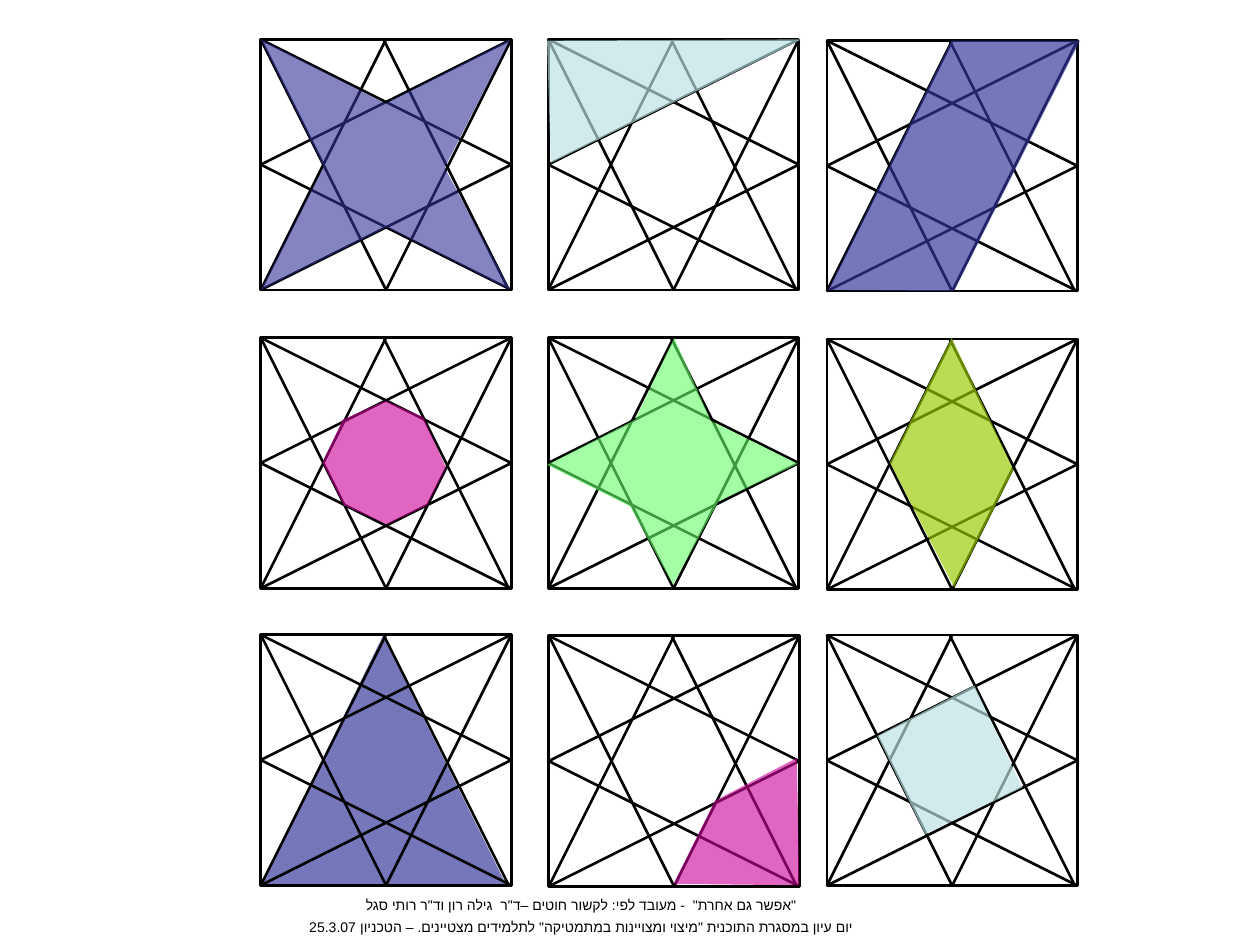
from lxml import etree
from pptx import Presentation
from pptx.dml.color import RGBColor
from pptx.enum.shapes import MSO_CONNECTOR, MSO_SHAPE
from pptx.enum.text import MSO_AUTO_SIZE, PP_ALIGN
from pptx.oxml.ns import qn
from pptx.util import Pt

RECTANGLE = MSO_SHAPE.RECTANGLE
STRAIGHT = MSO_CONNECTOR.STRAIGHT
CENTER = PP_ALIGN.CENTER
GROW = MSO_AUTO_SIZE.SHAPE_TO_FIT_TEXT

COLORS = {
    "ink": "000000",
    "indigo": "333399",
    "magenta": "CC0099",
    "lime": "99CC00",
    "mint": "66FF66",
    "ice": "BBE0E3",
}

TILE = 143.2
# Threads of one tile, as fractions of its side: x1, y1, x2, y2
THREADS = [
    (0, 0, 1, 0.5), (0, 0.5, 1, 0), (0, 1, 1, 0.5), (0, 0.5, 1, 1),
    (0.5, 1, 1, 0), (0, 0, 0.5, 1), (0.5, 0, 0, 1), (0.49, 0, 0.99, 1),
]

# Left, top, colour, opacity in percent, corners measured from the tile corner
TILES = [
    (149, 22.5, "indigo", 60, [
        (0, 0), (36, 72.7), (0, 143.2), (72, 107.3),
        (142.6, 143.2), (105.1, 73.4), (142.6, 0), (71.3, 36.7)]),
    (313.3, 22.5, "ice", 67, [(1.4, 70.6), (-0.7, 0.7), (144.7, 0)]),
    (472.5, 23.2, "indigo", 67, [
        (0.7, 142.6), (71.3, 0), (144.7, 0), (72.7, 143.2)]),
    (149, 193, "magenta", 60, [
        (46.8, 46.8), (35.3, 71.3), (47.5, 95.8), (72, 106.6),
        (95, 95.8), (105.8, 74.2), (92.9, 45.4), (71.3, 36)]),
    (313.3, 193, "mint", 60, [
        (142.6, 72), (92.9, 47.5), (72, 0), (49.7, 46.8),
        (-0.7, 72.7), (46.8, 96.5), (71.3, 141.1), (97.2, 93.6)]),
    (472.5, 193.7, "lime", 67, [
        (36, 70.6), (71.3, -0.7), (106.6, 74.9), (72.7, 141.8)]),
    (149, 362.7, "indigo", 67, [(0, 143.2), (69.8, 0.7), (140.4, 143.2)]),
    (313.6, 363.3, "magenta", 60, [
        (143.2, 142.6), (71.3, 141.8), (95, 94.3), (141.8, 69.8)]),
    (472.5, 362.9, "ice", 67, [
        (28.8, 57.6), (56.2, 113.8), (111.6, 87.1), (84.2, 28.8)]),
]
TRIANGLE_TILE = 6  # its threads lie over the coloured shape

CREDITS = [
    '"אפשר גם אחרת"  - מעובד לפי: לקשור חוטים –ד"ר  גילה רון וד"ר רותי סגל',
    'יום עיון במסגרת התוכנית "מיצוי ומצויינות במתמטיקה" לתלמידים מצטיינים. – הטכניון 25.3.07',
]


def write(para, text, font="Arial", size=8, color="ink", before=0):
    """Fill a centred right-to-left paragraph."""
    para.alignment = CENTER
    para.space_before = Pt(before)
    para._p.get_or_add_pPr().set("rtl", "1")
    span = para.add_run()
    span.text = text
    span.font.size = Pt(size)
    span.font.name = font
    span.font.color.rgb = RGBColor.from_string(COLORS[color])
    etree.SubElement(span._r.get_or_add_rPr(), qn("a:cs"), typeface=font)


class Painter:
    """Holds the line style and the current page."""

    def __init__(self, page, color="ink", width=1.5):
        self.page = page
        self.color = RGBColor.from_string(COLORS[color])
        self.width = Pt(width)

    def outline(self, shape):
        shape.line.color.rgb = self.color
        shape.line.width = self.width

    def thread(self, group, x1, y1, x2, y2):
        line = group.shapes.add_connector(
            STRAIGHT, Pt(x1), Pt(y1), Pt(x2), Pt(y2))
        self.outline(line)
        etree.SubElement(line._element.spPr, qn("a:effectLst"))

    def tile(self, left, top):
        """Draw a square crossed by its threads, as one group."""
        group = self.page.shapes.add_group_shape()
        square = group.shapes.add_shape(
            RECTANGLE, Pt(left), Pt(top), Pt(TILE), Pt(TILE))
        square.shadow.inherit = False
        square.fill.background()
        self.outline(square)
        for x1, y1, x2, y2 in THREADS:
            self.thread(group, left + x1 * TILE, top + y1 * TILE,
                        left + x2 * TILE, top + y2 * TILE)

    def polygon(self, left, top, corners, color, opacity):
        points = [(Pt(left + x), Pt(top + y)) for x, y in corners]
        builder = self.page.shapes.build_freeform(*points[0])
        builder.add_line_segments(points[1:], close=True)
        shape = builder.convert_to_shape()
        shape.shadow.inherit = False
        shape.line.fill.background()
        shape.fill.solid()
        shape.fill.fore_color.rgb = RGBColor.from_string(COLORS[color])
        tint = shape._element.spPr.find(".//" + qn("a:srgbClr"))
        etree.SubElement(tint, qn("a:alpha"), val=str(opacity * 1000))

    def text(self, left, top, width, height, lines, gap):
        box = self.page.shapes.add_textbox(
            Pt(left), Pt(top), Pt(width), Pt(height))
        frame = box.text_frame
        frame.word_wrap = True
        frame.auto_size = GROW
        write(frame.paragraphs[0], lines[0])
        for line in lines[1:]:
            write(frame.add_paragraph(), line, before=gap)


def main():
    deck = Presentation()
    deck.slide_width, deck.slide_height = Pt(720), Pt(540)
    painter = Painter(deck.slides.add_slide(deck.slide_layouts[6]))
    for index, (left, top, color, opacity, corners) in enumerate(TILES):
        if index != TRIANGLE_TILE:
            painter.tile(left, top)
        painter.polygon(left, top, corners, color, opacity)
        if index == TRIANGLE_TILE:
            painter.tile(left, top)
    painter.text(67.7, 509, 529.2, 29.5, CREDITS, gap=2.8)
    deck.save("out.pptx")


if __name__ == "__main__":
    main()
